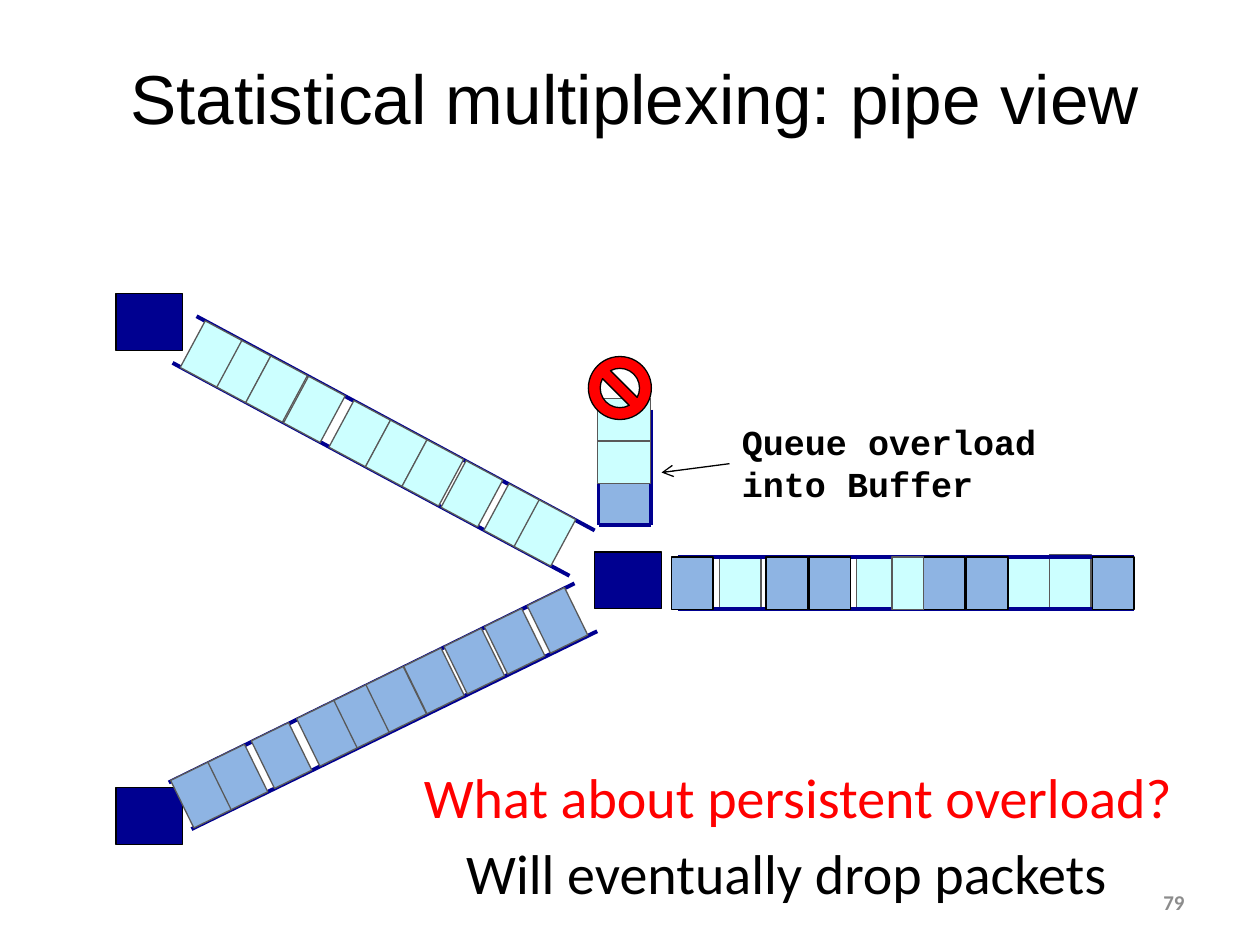
"""Build a slide on statistical multiplexing, seen as pipes of packets."""
from math import radians, tan

from lxml import etree
from pptx import Presentation
from pptx.dml.color import RGBColor
from pptx.enum.shapes import MSO_CONNECTOR, MSO_SHAPE
from pptx.enum.text import MSO_ANCHOR, PP_ALIGN
from pptx.oxml.ns import qn
from pptx.util import Inches, Pt

RECT, BAN = MSO_SHAPE.RECTANGLE, MSO_SHAPE.NO_SYMBOL
LINE = MSO_CONNECTOR.STRAIGHT
LEFT, MID, RIGHT = PP_ALIGN.LEFT, PP_ALIGN.CENTER, PP_ALIGN.RIGHT
TOP, CENTER = MSO_ANCHOR.TOP, MSO_ANCHOR.MIDDLE

NAVY = RGBColor(0x00, 0x00, 0x90)
AQUA = RGBColor(0xCC, 0xFF, 0xFF)
BLUE = RGBColor(0x8E, 0xB4, 0xE3)
GRAY = RGBColor(0x59, 0x59, 0x59)
PALE = RGBColor(0x8C, 0x8C, 0x8C)
RED = RGBColor(0xFF, 0x00, 0x00)
BLACK = RGBColor(0x00, 0x00, 0x00)

WIDE, HIGH = Inches(10), Inches(7.5)
COLS, ROWS = 10, 7.5
PACK = (0.33, 0.42)
NODE = (0.53, 0.45)


def col(n):
    """Turn grid columns into a length."""
    return round(WIDE * n / COLS)


def row(n):
    """Turn grid rows into a length."""
    return round(HIGH * n / ROWS)


def block(slide, x, y, size, fill, edge=BLACK, turn=0, kind=RECT, width=0.75):
    """Add a filled shape with an outline."""
    shape = slide.shapes.add_shape(kind, col(x), row(y), col(size[0]), row(size[1]))
    shape.shadow.inherit = False
    shape.fill.solid()
    shape.fill.fore_color.rgb = fill
    shape.line.color.rgb = edge
    shape.line.width = Pt(width)
    shape.rotation = turn


def line(slide, start, end, color=NAVY, width=2.25, arrow=False):
    """Add a straight line, with an arrowhead at its end if asked."""
    link = slide.shapes.add_connector(
        LINE, col(start[0]), row(start[1]), col(end[0]), row(end[1]))
    link.line.color.rgb = color
    link.line.width = Pt(width)
    if arrow:
        etree.SubElement(link.line._get_or_add_ln(), qn("a:tailEnd"), type="arrow")
    etree.SubElement(link._element.spPr, qn("a:effectLst"))


def label(slide, box, texts, font, size, color=BLACK, align=MID,
          anchor=TOP, bold=False, wrap=True):
    """Add a text box with one paragraph for each text."""
    x, y, w, h = box
    frame = slide.shapes.add_textbox(col(x), row(y), col(w), row(h)).text_frame
    frame.word_wrap = wrap
    frame.vertical_anchor = anchor
    for i, text in enumerate(texts):
        para = frame.add_paragraph() if i else frame.paragraphs[0]
        para.alignment = align
        run = para.add_run()
        run.text = text
        run.font.name, run.font.size = font, Pt(size)
        run.font.bold, run.font.color.rgb = bold, color


def lane(slide, rails, first, spots, turn, fill):
    """Add a sloping pipe whose packets lie along its axis."""
    for start, end in rails:
        line(slide, start, end)
    for x in spots:
        y = first[1] + (x - first[0]) * tan(radians(turn))
        block(slide, x, y, PACK, fill, GRAY, turn)


def trunk(slide):
    """Add the shared outgoing pipe and its mixed packets."""
    y = 4.42
    for x in (5.38, 5.42):
        if x == 5.42:
            for left, top in ((8.33, 4.4), (8, 4.41), (6.8, y), (5.71, y)):
                block(slide, left, top, PACK, AQUA, GRAY)
        for rail in (y, 4.83):
            line(slide, (x, rail), (x + 3.58, rail))
    for x in (6.08, 8.67, 7.33, 7.67):
        block(slide, x, y, PACK, BLUE)
    block(slide, 7.08, y, (0.25, PACK[1]), AQUA, GRAY)
    for x in (6.42, 5.33):
        block(slide, x, y, PACK, BLUE)


def queue(slide):
    """Add the buffer with its stacked packets."""
    near, far, lip, base = 4.75, 5.17, 3.25, 4.17
    block(slide, 4.79, 3.79, PACK, BLUE, GRAY, 90, width=0.5)
    for x in (near, far):
        line(slide, (x, lip), (x, base))
    line(slide, (near, base), (far, base))
    for y in (3.46, 3.12):
        block(slide, 4.79, y, PACK, AQUA, GRAY, 90, width=0.5)


def main():
    """Build and save the slide."""
    deck = Presentation()
    deck.slide_width, deck.slide_height = WIDE, HIGH
    slide = deck.slides.add_slide(deck.slide_layouts[6])
    label(slide, (0.5, 0.13, 9.08, 1.28), ["Statistical multiplexing: pipe view"],
          "Arial", 39.6, anchor=CENTER)
    for x, y in ((4.72, 4.38), (0.92, 2.33), (0.92, 6.25)):
        block(slide, x, y, NODE, NAVY)
    label(slide, (2.67, 6, 7.33, 0.64), ["What about persistent overload?"],
          "Calibri", 32, RED)
    lane(slide, (((1.56, 2.51), (4.72, 4.21)), ((1.37, 2.88), (4.52, 4.57))),
         (1.51, 2.6),
         (3.92, 3.58, 2.69, 1.74, 2.03, 2.33, 2.98, 3.27, 1.51, 4.16), 28.2, AQUA)
    lane(slide, (((1.34, 6.21), (4.56, 4.63)), ((1.52, 6.58), (4.74, 5.01))),
         (1.43, 6.1),
         (3.92, 3.6, 2.69, 1.72, 2.07, 2.43, 2.98, 3.28, 1.43, 4.26), 333.9, BLUE)
    trunk(slide)
    queue(slide)
    block(slide, 4.67, 2.83, (0.5, 0.5), RED, kind=BAN)
    label(slide, (2.58, 6.61, 7.33, 0.64), ["Will eventually drop packets"],
          "Calibri", 32)
    label(slide, (5.79, 3.29, 2.56, 0.77), ["Queue overload", "into Buffer"],
          "Courier New", 20, align=LEFT, bold=True, wrap=False)
    line(slide, (5.79, 3.68), (5.25, 3.75), BLACK, 0.75, arrow=True)
    label(slide, (7.17, 6.96, 2.33, 0.4), ["79"], "Calibri", 12, PALE,
          RIGHT, CENTER, bold=True)
    deck.save("out.pptx")


if __name__ == "__main__":
    main()
